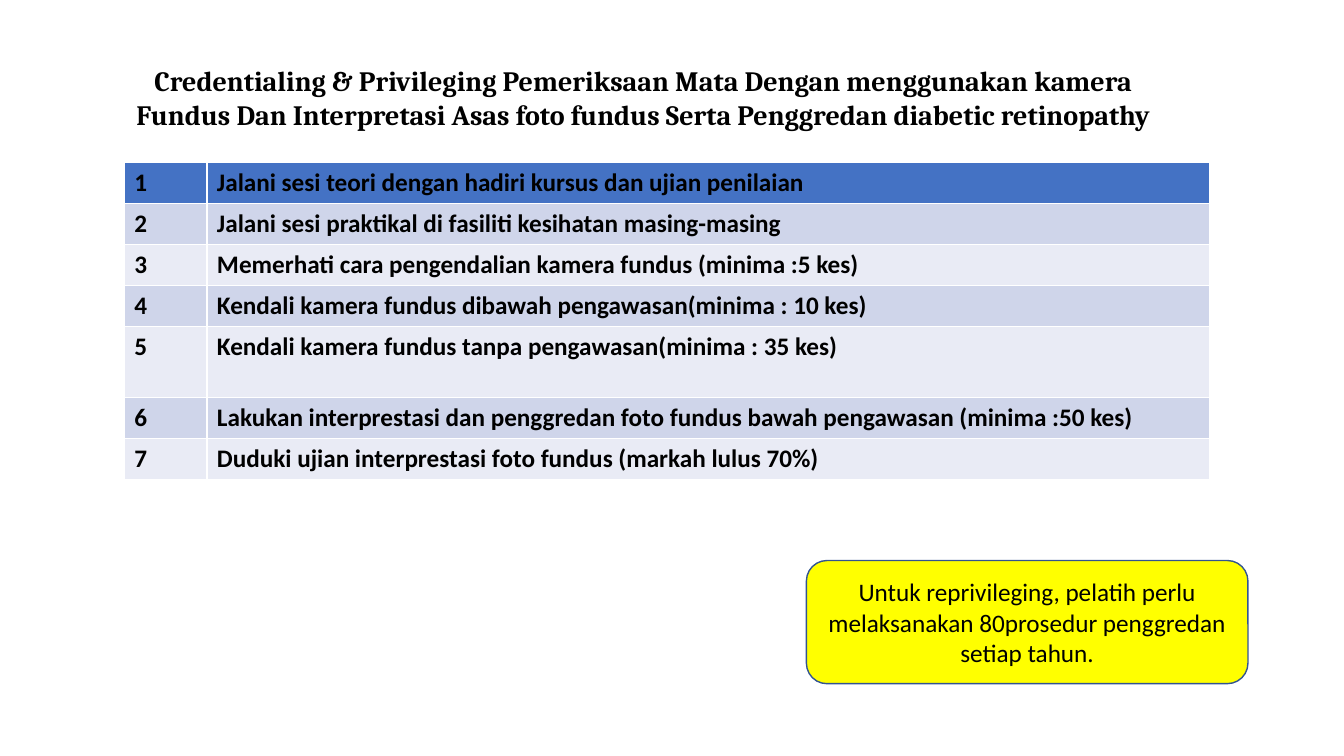
from pptx import Presentation
from pptx.dml.color import RGBColor
from pptx.enum.shapes import MSO_SHAPE
from pptx.enum.text import MSO_ANCHOR, PP_ALIGN
from pptx.util import Pt

BLACK = RGBColor(0x00, 0x00, 0x00)
HEADER_BLUE = RGBColor(0x44, 0x72, 0xC4)
BAND_DARK = RGBColor(0xCF, 0xD5, 0xEA)
BAND_LIGHT = RGBColor(0xE9, 0xEB, 0xF5)
YELLOW = RGBColor(0xFF, 0xFF, 0x00)
OUTLINE_BLUE = RGBColor(0x32, 0x54, 0x91)

TITLE = (
    "Credentialing & Privileging Pemeriksaan Mata Dengan menggunakan kamera "
    "Fundus Dan Interpretasi Asas foto fundus Serta Penggredan diabetic retinopathy"
)
STEPS = [
    "Jalani sesi teori dengan hadiri kursus dan ujian penilaian",
    "Jalani sesi praktikal di fasiliti kesihatan masing-masing",
    "Memerhati cara pengendalian kamera fundus (minima :5 kes)",
    "Kendali kamera fundus dibawah pengawasan(minima : 10 kes)",
    "Kendali kamera fundus tanpa pengawasan(minima : 35 kes)",
    "Lakukan interprestasi dan penggredan foto fundus bawah pengawasan (minima :50 kes)",
    "Duduki ujian interprestasi foto fundus (markah lulus 70%)",
]
REMINDER = (
    "Untuk reprivileging, pelatih perlu melaksanakan 80prosedur penggredan setiap tahun."
)
ROW_HEIGHT = 29.25
TALL_ROW_HEIGHT = 50.75
TALL_STEP = 5


class SlideBuilder:
    """Holds the text style and the slide being built."""

    title_font = "Cambria"
    body_font = "Calibri"
    title_size = Pt(20)
    body_size = Pt(18)

    def __init__(self, slide):
        self.slide = slide

    def set_text(self, text_frame, text, font_name, size, bold=False, alignment=None):
        text_frame.text = text
        paragraph = text_frame.paragraphs[0]
        paragraph.alignment = alignment
        paragraph.font.name = font_name
        paragraph.font.size = size
        paragraph.font.bold = bold
        paragraph.font.color.rgb = BLACK

    def title(self, text, left, top, width, height):
        box = self.slide.shapes.add_textbox(Pt(left), Pt(top), Pt(width), Pt(height))
        frame = box.text_frame
        frame.word_wrap = True
        frame.vertical_anchor = MSO_ANCHOR.BOTTOM
        frame.margin_left = frame.margin_right = Pt(7.2)
        frame.margin_top = frame.margin_bottom = Pt(7.2)
        self.set_text(frame, text, self.title_font, self.title_size, True, PP_ALIGN.CENTER)

    def numbered_table(self, steps, left, top, column_widths, row_heights):
        table = self.slide.shapes.add_table(
            len(steps), len(column_widths), Pt(left), Pt(top),
            Pt(sum(column_widths)), Pt(sum(row_heights)),
        ).table
        for column, width in zip(table.columns, column_widths):
            column.width = Pt(width)
        for number, step in enumerate(steps, start=1):
            row = table.rows[number - 1]
            row.height = Pt(row_heights[number - 1])
            band = BAND_LIGHT if number % 2 else BAND_DARK
            for cell, text in zip(row.cells, (str(number), step)):
                cell.fill.solid()
                cell.fill.fore_color.rgb = HEADER_BLUE if number == 1 else band
                self.set_text(cell.text_frame, text, self.body_font, self.body_size, True)

    def callout(self, text, left, top, width, height):
        shape = self.slide.shapes.add_shape(
            MSO_SHAPE.ROUNDED_RECTANGLE, Pt(left), Pt(top), Pt(width), Pt(height)
        )
        shape.shadow.inherit = False
        shape.fill.solid()
        shape.fill.fore_color.rgb = YELLOW
        shape.line.color.rgb = OUTLINE_BLUE
        shape.line.width = Pt(1)
        frame = shape.text_frame
        frame.word_wrap = True
        frame.vertical_anchor = MSO_ANCHOR.MIDDLE
        self.set_text(frame, text, self.body_font, self.body_size, alignment=PP_ALIGN.CENTER)


def main():
    presentation = Presentation()
    presentation.slide_width = Pt(960)
    presentation.slide_height = Pt(540)
    builder = SlideBuilder(presentation.slides.add_slide(presentation.slide_layouts[6]))

    # Heading
    builder.title(TITLE, 71.3, 27.4, 776.9, 73.4)

    # Steps to be completed
    row_heights = [
        TALL_ROW_HEIGHT if number == TALL_STEP else ROW_HEIGHT
        for number in range(1, len(STEPS) + 1)
    ]
    builder.numbered_table(STEPS, 88.8, 116.2, (59, 716.4), row_heights)

    # Renewal reminder
    builder.callout(REMINDER, 576, 400.4, 315.4, 88)

    presentation.save("out.pptx")


if __name__ == "__main__":
    main()
